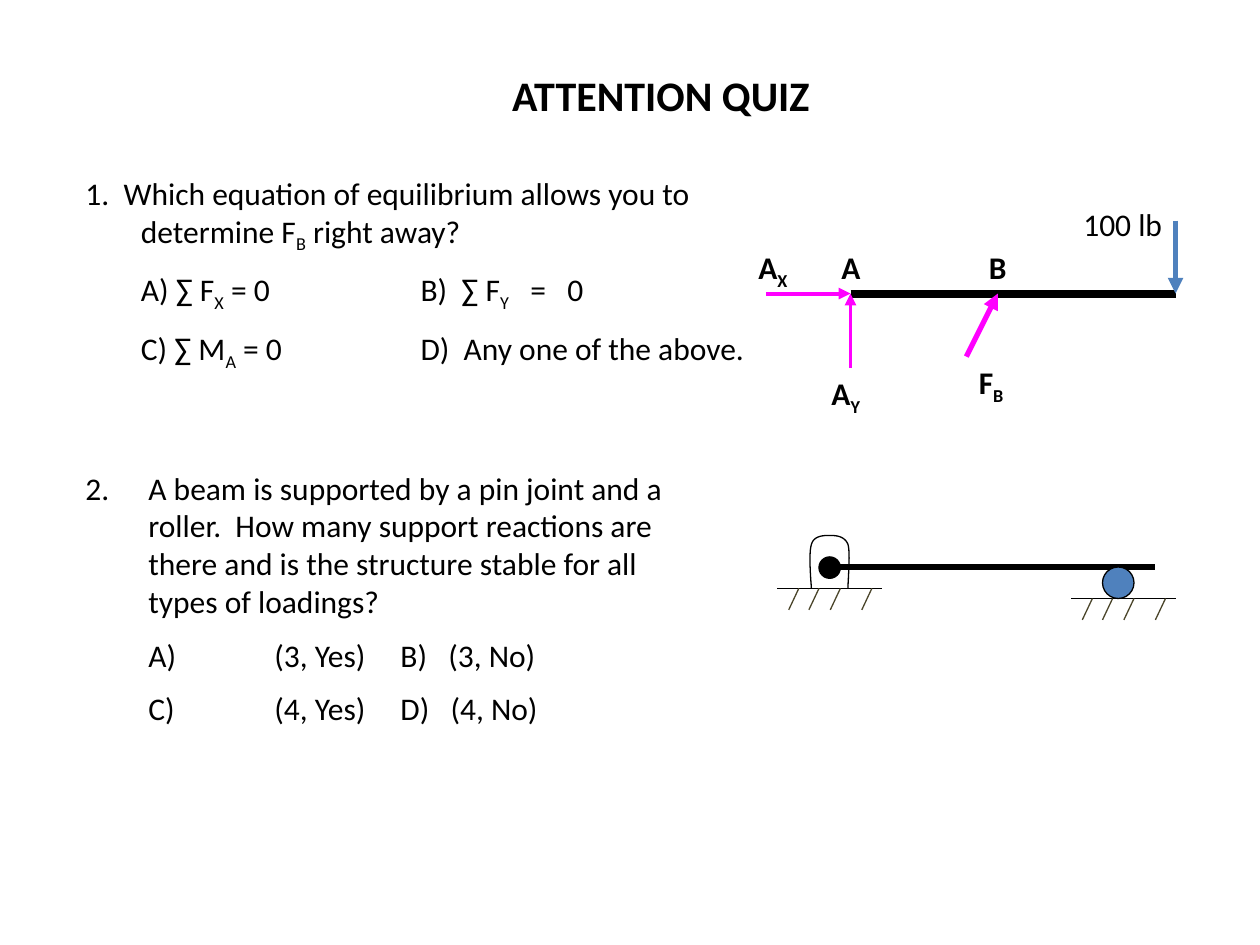
from lxml import etree
from pptx import Presentation
from pptx.dml.color import RGBColor
from pptx.enum.shapes import MSO_CONNECTOR, MSO_SHAPE
from pptx.enum.text import PP_ALIGN
from pptx.oxml.ns import qn
from pptx.util import Inches, Pt

BLACK = RGBColor(0x00, 0x00, 0x00)
MAGENTA = RGBColor(0xFF, 0x00, 0xFF)
BLUE = RGBColor(0x4F, 0x81, 0xBD)
OLIVE = RGBColor(0x4A, 0x45, 0x2A)


def add_text(shapes, box, lines, size=18, bold=False, hang=0, tabs=()):
    """Add a text box; the letter after an underscore is a subscript."""
    sp = shapes.add_textbox(*[Inches(v) for v in box])
    tf = sp.text_frame
    tf.word_wrap = True
    for i, line in enumerate(lines):
        p = tf.paragraphs[0] if i == 0 else tf.add_paragraph()
        pPr = p._p.get_or_add_pPr()
        if i == 0:
            # The question hangs; option rows are placed by tab stops
            pPr.set("marL", str(Inches(hang)))
            pPr.set("indent", str(-Inches(hang)))
        else:
            p.space_before = Pt(9)
        if tabs and i > 0:
            tab_list = etree.SubElement(pPr, qn("a:tabLst"))
            for pos in tabs:
                etree.SubElement(tab_list, qn("a:tab"), pos=str(Inches(pos)), algn="l")
        first, *rest = line.split("_")
        parts = [(first, False)]
        for part in rest:
            parts += [(part[0], True), (part[1:], False)]
        for text, subscript in parts:
            if not text:
                continue
            r = p.add_run()
            r.text = text
            r.font.name = "Calibri"
            r.font.size = Pt(size)
            r.font.bold = bold
            r.font.color.rgb = BLACK
            if subscript:
                r._r.get_or_add_rPr().set("baseline", "-25000")
    return sp


def add_line(shapes, start, end, color=BLACK, width=0.75, arrow=False):
    """Add a straight line, with an optional arrowhead at its end."""
    ends = [Inches(v) for v in (*start, *end)]
    cxn = shapes.add_connector(MSO_CONNECTOR.STRAIGHT, *ends)
    cxn.line.color.rgb = color
    cxn.line.width = Pt(width)
    if arrow:
        etree.SubElement(cxn.line._get_or_add_ln(), qn("a:tailEnd"), type="triangle")
    etree.SubElement(cxn._element.spPr, qn("a:effectLst"))


prs = Presentation()
prs.slide_width = Inches(10)
prs.slide_height = Inches(7.5)
slide = prs.slides.add_slide(prs.slide_layouts[6])

# Title
title = add_text(slide.shapes, (1.33, 0.5, 7.83, 0.5), ["ATTENTION QUIZ"], 24, True)
title.text_frame.paragraphs[0].alignment = PP_ALIGN.CENTER

# Questions with their options
add_text(slide.shapes, (0.58, 1.33, 5.75, 1.62), [
    "1.  Which equation of equilibrium allows you to determine F_B right away?",
    "\tA) ∑ F_X = 0\tB)  ∑ F_Y   =   0",
    "\tC) ∑ M_A = 0\tD)  Any one of the above.",
], hang=0.44, tabs=(0.44, 2.66))
add_text(slide.shapes, (0.58, 3.67, 5.17, 3.03), [
    "2.\tA beam is supported by a pin joint and a roller.  How many support "
    "reactions are there and is the structure stable for all types of loadings?",
    "\tA)\t(3, Yes)\tB)   (3, No)",
    "\tC)\t(4, Yes)\tD)   (4, No)",
], hang=0.5, tabs=(0.5, 1.5, 2.5))

# Free-body diagram: beam, forces and labels
forces = slide.shapes.add_group_shape().shapes
point_a, point_b, beam_end = (6.75, 2.33), (7.92, 2.33), (9.33, 2.33)
add_line(forces, point_a, beam_end, width=4.5)
for start, end, color, width in [
    ((6.08, 2.33), point_a, MAGENTA, 2.25),
    ((6.75, 2.92), point_a, MAGENTA, 2.25),
    ((7.67, 2.83), point_b, MAGENTA, 3),
    ((9.33, 1.75), beam_end, BLUE, 3),
]:
    add_line(forces, start, end, color, width, arrow=True)
for label, left, top, width in [
    ("A_X", 5.92, 1.92, 0.58),
    ("A", 6.58, 1.92, 0.5),
    ("B", 7.75, 1.92, 0.42),
    ("F_B", 7.67, 2.83, 0.5),
    ("A_Y", 6.5, 2.92, 0.58),
    ("100 lb", 8.5, 1.58, 1),
]:
    add_text(forces, (left, top, width, 0.4), [label], bold=label != "100 lb")

# Supported beam
supports = slide.shapes.add_group_shape().shapes
add_line(supports, (6.5, 4.5), (9.17, 4.5), width=3)

# Pin bracket, traced along its Bezier curves
curves = [
    [(6.44, 4.67), (6.43, 4.53), (6.42, 4.39), (6.44, 4.32)],
    [(6.44, 4.32), (6.46, 4.25), (6.54, 4.25), (6.58, 4.25)],
    [(6.58, 4.25), (6.63, 4.25), (6.7, 4.25), (6.73, 4.32)],
    [(6.73, 4.32), (6.75, 4.39), (6.73, 4.61), (6.73, 4.67)],
]
steps = 12
points = []
for curve in curves:
    for n in range(1, steps + 1):
        t = n / steps
        weights = ((1 - t) ** 3, 3 * t * (1 - t) ** 2, 3 * t * t * (1 - t), t ** 3)
        points.append([Inches(sum(w * c[axis] for w, c in zip(weights, curve)))
                       for axis in (0, 1)])
fb = supports.build_freeform(Inches(6.44), Inches(4.67))
fb.add_line_segments(points, close=False)
bracket = fb.convert_to_shape()
bracket.shadow.inherit = False
bracket.fill.background()
bracket.line.color.rgb = BLACK
bracket.line.width = Pt(0.75)

# Hatched ground under each support
for left, top in [(6.17, 4.67), (8.5, 4.75)]:
    add_line(supports, (left, top), (left + 0.83, top))
    for offset in (0.17, 0.33, 0.5, 0.75):
        x = left + offset
        add_line(supports, (x, top), (x - 0.08, top + 0.17), OLIVE)

# Pin and roller
for left, top, size, color in [(6.5, 4.42, 0.17, BLACK), (8.75, 4.5, 0.25, BLUE)]:
    sp = supports.add_shape(MSO_SHAPE.OVAL, Inches(left), Inches(top),
                            Inches(size), Inches(size))
    sp.shadow.inherit = False
    sp.fill.solid()
    sp.fill.fore_color.rgb = color
    sp.line.color.rgb = BLACK
    sp.line.width = Pt(0.75)

prs.save("out.pptx")
